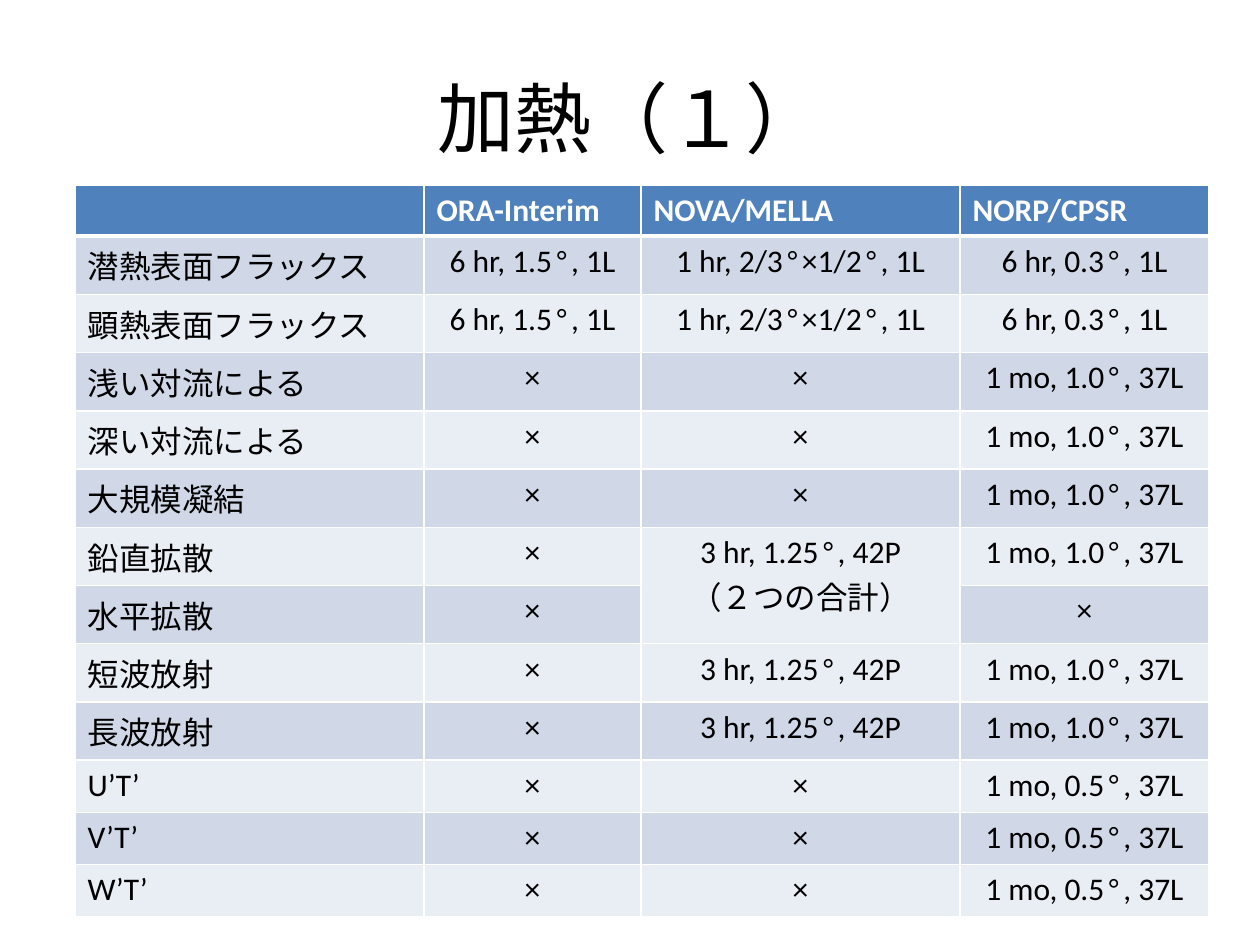
from dataclasses import dataclass
from itertools import groupby

from lxml.etree import SubElement
from pptx import Presentation
from pptx.dml.color import RGBColor
from pptx.enum.lang import MSO_LANGUAGE_ID
from pptx.enum.text import MSO_ANCHOR, PP_ALIGN
from pptx.oxml.ns import qn
from pptx.util import Emu, Pt

PIXEL = 914400 // 126


@dataclass(frozen=True)
class Theme:
    font: str = "Calibri"
    degree_font: str = "Courier New"
    title_size: int = 44
    body_size: int = 18
    ink: str = "000000"
    white: str = "FFFFFF"
    header: str = "4F81BD"
    bands: tuple[str, str] = ("D0D8E8", "E9EDF4")
    thin: int = 1
    thick: int = 3


@dataclass(frozen=True)
class HeatingTerm:
    name: str
    interim: str
    merged: str
    coupled: str

    def values(self) -> tuple[str, ...]:
        return self.name, self.interim, self.merged, self.coupled


THEME = Theme()
COLUMN_WIDTHS = (349, 217, 319, 249)
ROW_HEIGHT = 51

# Recurring dataset resolutions
NONE = "×"
SURFACE = ("6 hr, 1.5°, 1L", "1 hr, 2/3°×1/2°, 1L", "6 hr, 0.3°, 1L")
LEVELS = "3 hr, 1.25°, 42P"
MONTHLY = "1 mo, 1.0°, 37L"
FINE_MONTHLY = "1 mo, 0.5°, 37L"

HEADERS = ("", "ORA-Interim", "NOVA/MELLA", "NORP/CPSR")
TERMS = (
    HeatingTerm("潜熱表面フラックス", *SURFACE),
    HeatingTerm("顕熱表面フラックス", *SURFACE),
    HeatingTerm("浅い対流による", NONE, NONE, MONTHLY),
    HeatingTerm("深い対流による", NONE, NONE, MONTHLY),
    HeatingTerm("大規模凝結", NONE, NONE, MONTHLY),
    HeatingTerm("鉛直拡散", NONE, f"{LEVELS}\n（２つの合計）", MONTHLY),
    HeatingTerm("水平拡散", NONE, "", NONE),
    HeatingTerm("短波放射", NONE, LEVELS, MONTHLY),
    HeatingTerm("長波放射", NONE, LEVELS, MONTHLY),
    HeatingTerm("U’T’", NONE, NONE, FINE_MONTHLY),
    HeatingTerm("V’T’", NONE, NONE, FINE_MONTHLY),
    HeatingTerm("W’T’", NONE, NONE, FINE_MONTHLY),
)
DIFFUSION_ROWS = (6, 7)
DIFFUSION_COLUMN = 2


def px(length: int) -> Emu:
    return Emu(length * PIXEL)


def write_text(frame, text: str, *, size: int = THEME.body_size, color: str = THEME.ink,
               bold: bool = False, align: PP_ALIGN = PP_ALIGN.LEFT) -> None:
    """Write one paragraph per line, with degree signs in their own font."""
    for index, line in enumerate(text.split("\n")):
        para = frame.add_paragraph() if index else frame.paragraphs[0]
        para.alignment = align
        for is_degree, letters in groupby(line, key=lambda letter: letter == "°"):
            span = para.add_run()
            span.text = "".join(letters)
            font = span.font
            font.name = THEME.degree_font if is_degree else THEME.font
            font.size = Pt(size)
            font.bold = bold
            font.color.rgb = RGBColor.from_string(color)
            font.language_id = MSO_LANGUAGE_ID.JAPANESE


def draw_cell(cell, fill: str, top: int, bottom: int) -> None:
    """Give a cell white borders and a solid fill."""
    properties = cell._tc.get_or_add_tcPr()
    widths = {"a:lnL": THEME.thin, "a:lnR": THEME.thin, "a:lnT": top, "a:lnB": bottom}
    for tag, width in widths.items():
        line = SubElement(properties, qn(tag), w=str(Pt(width)))
        solid = SubElement(line, qn("a:solidFill"))
        SubElement(solid, qn("a:srgbClr"), val=THEME.white)
    cell.fill.solid()
    cell.fill.fore_color.rgb = RGBColor.from_string(fill)


def draw_title(page, text: str) -> None:
    box = page.shapes.title
    box.left, box.top, box.width, box.height = map(px, (63, 38, 1134, 158))
    box.text_frame.vertical_anchor = MSO_ANCHOR.MIDDLE
    write_text(box.text_frame, text, size=THEME.title_size, align=PP_ALIGN.CENTER)


def draw_table(page) -> None:
    row_count = len(TERMS) + 1
    table = page.shapes.add_table(row_count, len(HEADERS), px(75), px(185),
                                  px(sum(COLUMN_WIDTHS)), px(ROW_HEIGHT * row_count)).table
    for column, width in zip(table.columns, COLUMN_WIDTHS):
        column.width = px(width)
    for row in table.rows:
        row.height = px(ROW_HEIGHT)

    # Header row
    for column, text in enumerate(HEADERS):
        cell = table.cell(0, column)
        draw_cell(cell, THEME.header, THEME.thin, THEME.thick)
        write_text(cell.text_frame, text, color=THEME.white, bold=True)

    # Banded body rows
    for row, term in enumerate(TERMS, start=1):
        for column, text in enumerate(term.values()):
            cell = table.cell(row, column)
            top = THEME.thick if row == 1 else THEME.thin
            draw_cell(cell, THEME.bands[(row - 1) % 2], top, THEME.thin)
            write_text(cell.text_frame, text,
                       align=PP_ALIGN.CENTER if column else PP_ALIGN.LEFT)

    # Both diffusion terms share one value
    first, last = (table.cell(row, DIFFUSION_COLUMN) for row in DIFFUSION_ROWS)
    first.merge(last)


def main() -> None:
    deck = Presentation()
    deck.slide_width, deck.slide_height = px(1260), px(945)
    page = deck.slides.add_slide(deck.slide_layouts[5])
    draw_title(page, "加熱（１）")
    draw_table(page)
    deck.save("out.pptx")


if __name__ == "__main__":
    main()
